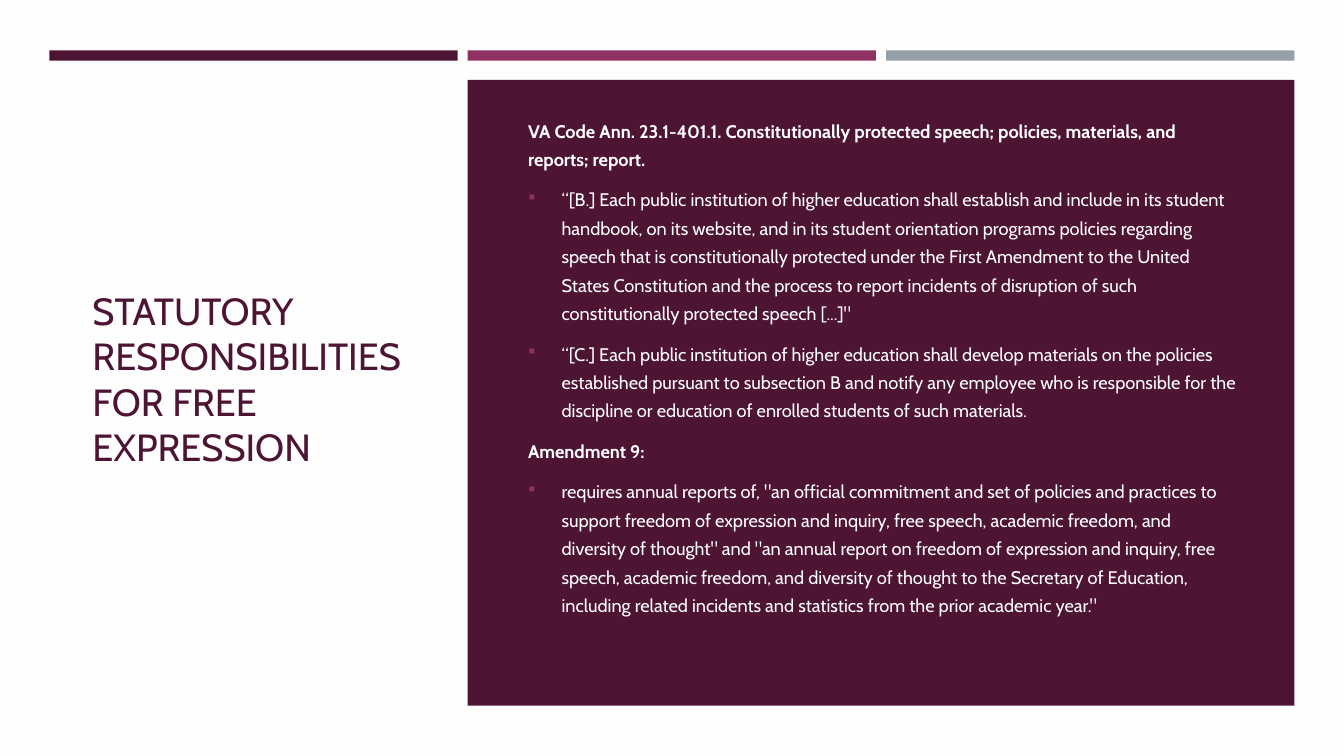
from dataclasses import dataclass

from lxml import etree
from pptx import Presentation
from pptx.dml.color import RGBColor
from pptx.enum.shapes import MSO_SHAPE
from pptx.enum.text import MSO_ANCHOR
from pptx.oxml.ns import qn
from pptx.util import Pt

RECT = MSO_SHAPE.RECTANGLE
TOP, MIDDLE = MSO_ANCHOR.TOP, MSO_ANCHOR.MIDDLE


@dataclass(frozen=True)
class Theme:
    font: str = "Cabin"
    bullet_font: str = "Wingdings"
    paper: str = "FFFEFF"
    plum: str = "4D1434"
    magenta: str = "903163"
    grey: str = "969FA7"
    white: str = "FFFFFF"
    title_size: float = 27
    body_size: float = 13


THEME = Theme()
TITLE = "STATUTORY RESPONSIBILITIES FOR FREE EXPRESSION"
# (is heading, text)
BODY = [
    (True, "VA Code Ann.\u00a023.1-401.1. Constitutionally protected speech; policies, "
           "materials, and reports; report."),
    (False, "“[B.] Each public institution of higher education shall establish and include "
            "in its student handbook, on its website, and in its student orientation programs "
            "policies regarding speech that is constitutionally protected under the First "
            "Amendment to the United States Constitution and the process to report incidents "
            "of disruption of such constitutionally protected speech [...]\""),
    (False, "“[C.] Each public institution of higher education shall develop materials on the "
            "policies established pursuant to subsection B and notify any employee who is "
            "responsible for the discipline or education of enrolled students of such "
            "materials."),
    (True, "Amendment 9:\u00a0"),
    (False, "requires annual reports of, \"an official commitment and set of policies and "
            "practices to support freedom of expression and inquiry, free speech, academic "
            "freedom, and diversity of thought\" and \"an annual report on freedom of "
            "expression and inquiry, free speech, academic freedom, and diversity of thought "
            "to the Secretary of Education, including related incidents and statistics from "
            "the prior academic year.\""),
]


def add_block(s, x, y, w, h, color):
    sp = s.shapes.add_shape(RECT, Pt(x), Pt(y), Pt(w), Pt(h))
    sp.shadow.inherit = False
    sp.fill.solid()
    sp.fill.fore_color.rgb = RGBColor.from_string(color)
    sp.line.fill.background()


def add_text_frame(s, x, y, w, h, anchor):
    tf = s.shapes.add_textbox(Pt(x), Pt(y), Pt(w), Pt(h)).text_frame
    tf.word_wrap = True
    tf.vertical_anchor = anchor
    return tf


def style_paragraph(p, size, color, bold=False):
    p.font.name = THEME.font
    p.font.size = Pt(size)
    p.font.bold = bold
    p.font.color.rgb = RGBColor.from_string(color)


def add_bullet(p, indent=24):
    """Add a square bullet: "§" is the square in the bullet font."""
    pPr = p._p.get_or_add_pPr()
    pPr.set("marL", str(Pt(indent)))
    pPr.set("indent", str(-Pt(indent)))
    # Bullet elements must come before the default run properties
    bullet = [etree.Element(qn(tag))
              for tag in ("a:buClr", "a:buSzPct", "a:buFont", "a:buChar")]
    clr, size, font, char = bullet
    etree.SubElement(clr, qn("a:srgbClr")).set("val", THEME.magenta)
    size.set("val", "92000")
    font.set("typeface", THEME.bullet_font)
    font.set("charset", "2")
    char.set("char", "§")
    for el in bullet:
        pPr.find(qn("a:defRPr")).addprevious(el)


def add_bars(s, x, y, w, h, gap):
    colors = (THEME.plum, THEME.magenta, THEME.grey)
    bar_w = (w - gap * (len(colors) - 1)) / len(colors)
    for i, color in enumerate(colors):
        add_block(s, x + i * (bar_w + gap), y, bar_w, h, color)


def add_title(s, x, y, w, h):
    tf = add_text_frame(s, x, y, w, h, MIDDLE)
    p = tf.paragraphs[0]
    p.text = TITLE
    style_paragraph(p, THEME.title_size, THEME.plum)


def add_statute_panel(s, x, y, w, h):
    add_block(s, x, y, w, h, THEME.plum)
    tf = add_text_frame(s, x + 36, y + 20.4, w - 70, h - 46, TOP)
    for i, (heading, text) in enumerate(BODY):
        p = tf.add_paragraph() if i else tf.paragraphs[0]
        p.text = text
        p.line_spacing = 1.3
        p.space_before = Pt(2.6)
        p.space_after = Pt(6)
        style_paragraph(p, THEME.body_size, THEME.white, bold=heading)
        if not heading:
            add_bullet(p)


def main():
    prs = Presentation()
    prs.slide_width, prs.slide_height = Pt(960), Pt(540)
    s = prs.slides.add_slide(prs.slide_layouts[6])
    s.background.fill.solid()
    s.background.fill.fore_color.rgb = RGBColor.from_string(THEME.paper)

    left, width, gap = 35.2, 889.4, 7.2
    panel_w = (width * 2 - gap) / 3
    add_title(s, 59, 84.8, 240.5, 370.8)
    add_bars(s, left, 36, width, 7.4, gap)
    add_statute_panel(s, left + width - panel_w, 57, panel_w, 447)
    prs.save("out.pptx")


if __name__ == "__main__":
    main()
